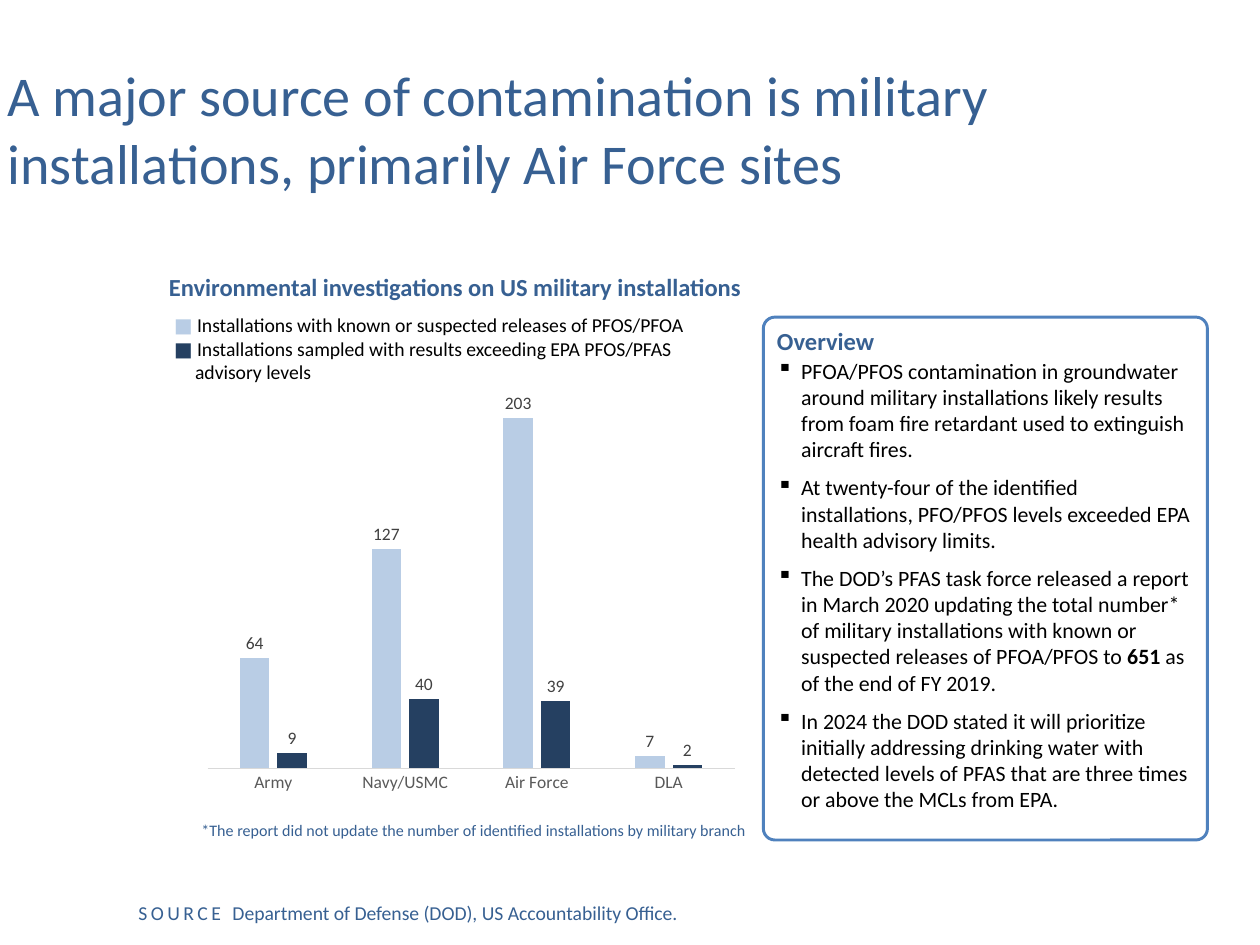
import pptx
import pptx.util
import pptx.dml.color
import pptx.enum.text
import pptx.enum.shapes
import pptx.enum.chart
import pptx.chart.data
import pptx.oxml

BLUE, BLACK = "376092", "000000"
PALE, DARK = "B9CDE5", "254061"
FACE = "Calibri"

POINTS = [
    ["PFOA/PFOS contamination in groundwater around military installations likely results "
     "from foam fire retardant used to extinguish aircraft fires."],
    ["At twenty-four of the identified installations, PFO/PFOS levels exceeded EPA health "
     "advisory limits."],
    ["The DOD’s PFAS task force released a report in March 2020 updating the total number* "
     "of military installations with known or suspected releases of PFOA/PFOS to ",
     "651 ", "as of the end of FY 2019."],
    ["In 2024 the DOD stated it will prioritize initially addressing drinking water with "
     "detected levels of PFAS that are three times or above the MCLs from EPA."],
]
KEYS = [
    (PALE, ["Installations with known or suspected releases of PFOS/PFOA"]),
    (DARK, ["Installations sampled with results exceeding EPA PFOS/PFAS", "advisory levels"]),
]
BRANCHES = ["Army", "Navy/USMC", "Air Force", "DLA"]
SERIES = [("Series 1", [64, 127, 203, 7], PALE), ("Series 2", [9, 40, 39, 2], DARK)]
PLOT = {"x": 0.05, "y": 0.04, "w": 0.94, "h": 0.88}


def px(num):
    """Turn px, 100 to the inch, into EMU."""
    return pptx.util.Emu(num * 9144)


def rgb(code):
    """Give the colour for a hex string."""
    return pptx.dml.color.RGBColor.from_string(code)


def style(font, size, color, bold=False):
    """Set face, size, colour and weight of a font."""
    font.name, font.size, font.bold = FACE, pptx.util.Pt(size), bold
    font.color.rgb = rgb(color)


def hang(para, left):
    """Give a paragraph a hanging indent."""
    props = para._p.get_or_add_pPr()
    props.set("marL", str(px(left)))
    props.set("indent", str(-px(left)))


def add_text(slide, box, text, size, color, bold=False):
    """Add a wrapped text box with one paragraph and return its frame."""
    frame = slide.shapes.add_textbox(*map(px, box)).text_frame
    frame.word_wrap = True
    para = frame.paragraphs[0]
    para.text = text
    style(para.font, size, color, bold)
    return frame


def add_title(slide, text):
    """Place and format the title."""
    title = slide.shapes.title
    title.left, title.top, title.width, title.height = map(px, (-3, 32, 963, 180))
    frame = title.text_frame
    frame.text = text
    frame.auto_size = pptx.enum.text.MSO_AUTO_SIZE.NONE
    frame.vertical_anchor = pptx.enum.text.MSO_ANCHOR.MIDDLE
    para = frame.paragraphs[0]
    para.alignment = pptx.enum.text.PP_ALIGN.LEFT
    style(para.font, 38.5, BLUE)


def add_source(slide):
    """Add the source line with its spaced label."""
    frame = add_text(slide, (122, 853, 573, 33), "", 13.5, BLUE)
    para = frame.paragraphs[0]
    label = para.add_run()
    label.text = "SOURCE "
    label.font._element.set("spc", "240")
    para.add_run().text = "Department of Defense (DOD), US Accountability Office."


def add_panel(slide):
    """Add the rounded overview panel with its bullets."""
    panel = slide.shapes.add_shape(
        pptx.enum.shapes.MSO_SHAPE.ROUNDED_RECTANGLE, *map(px, (727, 302, 423, 498)))
    panel.adjustments[0] = 0.026
    panel.shadow.inherit = False
    panel.fill.background()
    panel.line.color.rgb = rgb("4F81BD")
    panel.line.width = pptx.util.Pt(2)
    frame = panel.text_frame
    frame.word_wrap = True
    frame.vertical_anchor = pptx.enum.text.MSO_ANCHOR.TOP
    head = frame.paragraphs[0]
    head.text = "Overview"
    head.alignment = pptx.enum.text.PP_ALIGN.LEFT
    head.space_after = pptx.util.Pt(1.5)
    style(head.font, 16.8, BLUE, True)
    for parts in POINTS:
        para = frame.add_paragraph()
        para.alignment = pptx.enum.text.PP_ALIGN.LEFT
        para.space_after = pptx.util.Pt(8)
        hang(para, 23)
        mark = pptx.oxml.parse_xml(
            '<a:buChar xmlns:a="http://schemas.openxmlformats.org/drawingml/2006/main" char="▪"/>')
        para._p.get_or_add_pPr().append(mark)
        style(para.font, 15, BLACK)
        for spot, part in enumerate(parts):
            run = para.add_run()
            run.text = part
            if spot == 1:
                run.font.bold = True


def add_legend(slide):
    """Add the legend with coloured squares."""
    frame = add_text(slide, (156, 293, 564, 48), "", 13.5, BLACK)
    for spot, (color, lines) in enumerate(KEYS):
        para = frame.add_paragraph() if spot else frame.paragraphs[0]
        hang(para, 20)
        style(para.font, 13.5, BLACK)
        mark = para.add_run()
        mark.text = "■ "
        style(mark.font, 13.5, color, True)
        for row, line in enumerate(lines):
            if row:
                para.add_line_break()
            para.add_run().text = line


def set_plot(chart):
    """Fix the inner plot area within the chart."""
    modes = "".join(f'<c:{key}Mode val="edge"/>' for key in "xy")
    sizes = "".join(f'<c:{key} val="{val}"/>' for key, val in PLOT.items())
    layout = pptx.oxml.parse_xml(
        '<c:layout xmlns:c="http://schemas.openxmlformats.org/drawingml/2006/chart">'
        f'<c:manualLayout><c:layoutTarget val="inner"/>{modes}{sizes}</c:manualLayout></c:layout>')
    area = chart._chartSpace.chart.plotArea
    for old in area.xpath("c:layout"):
        area.remove(old)
    area.insert(0, layout)


def add_chart(slide):
    """Add the column chart of installations by branch."""
    data = pptx.chart.data.CategoryChartData()
    data.categories = BRANCHES
    for name, vals, _ in SERIES:
        data.add_series(name, vals)
    kind = pptx.enum.chart.XL_CHART_TYPE.COLUMN_CLUSTERED
    chart = slide.shapes.add_chart(kind, *map(px, (171, 302, 534, 467)), data).chart
    chart.has_title = chart.has_legend = False
    style(chart.font, 12, BLACK)
    set_plot(chart)
    plot = chart.plots[0]
    plot.gap_width, plot.overlap = 219, -27
    plot.vary_by_categories = False
    for bars, (_, _, color) in zip(plot.series, SERIES):
        bars.format.fill.solid()
        bars.format.fill.fore_color.rgb = rgb(color)
        tags = bars.data_labels
        tags.show_value = True
        tags.position = pptx.enum.chart.XL_LABEL_POSITION.OUTSIDE_END
        style(tags.font, 12, "404040")
    scale = chart.value_axis
    scale.visible = scale.has_major_gridlines = False
    scale.minimum_scale, scale.maximum_scale = 0, 250
    axis = chart.category_axis
    axis.major_tick_mark = pptx.enum.chart.XL_TICK_MARK.NONE
    axis.format.line.color.rgb = rgb("D9D9D9")
    axis.format.line.width = pptx.util.Pt(0.75)
    style(axis.tick_labels.font, 12, "595959")


def main():
    """Build and save the slide."""
    deck = pptx.Presentation()
    deck.slide_width, deck.slide_height = px(1200), px(900)
    slide = deck.slides.add_slide(deck.slide_layouts[5])
    add_title(slide, "A major source of contamination is military installations, "
                     "primarily Air Force sites")
    add_source(slide)
    add_text(slide, (151, 254, 963, 55),
             "Environmental investigations on US military installations", 16.8, BLUE, True)
    add_panel(slide)
    add_chart(slide)
    add_legend(slide)
    note = add_text(slide, (182, 775, 600, 25),
                    "*The report did not update the number of identified installations "
                    "by military branch", 11, BLUE)
    note.paragraphs[0].line_spacing = 1.1
    deck.save("out.pptx")


if __name__ == "__main__":
    main()
